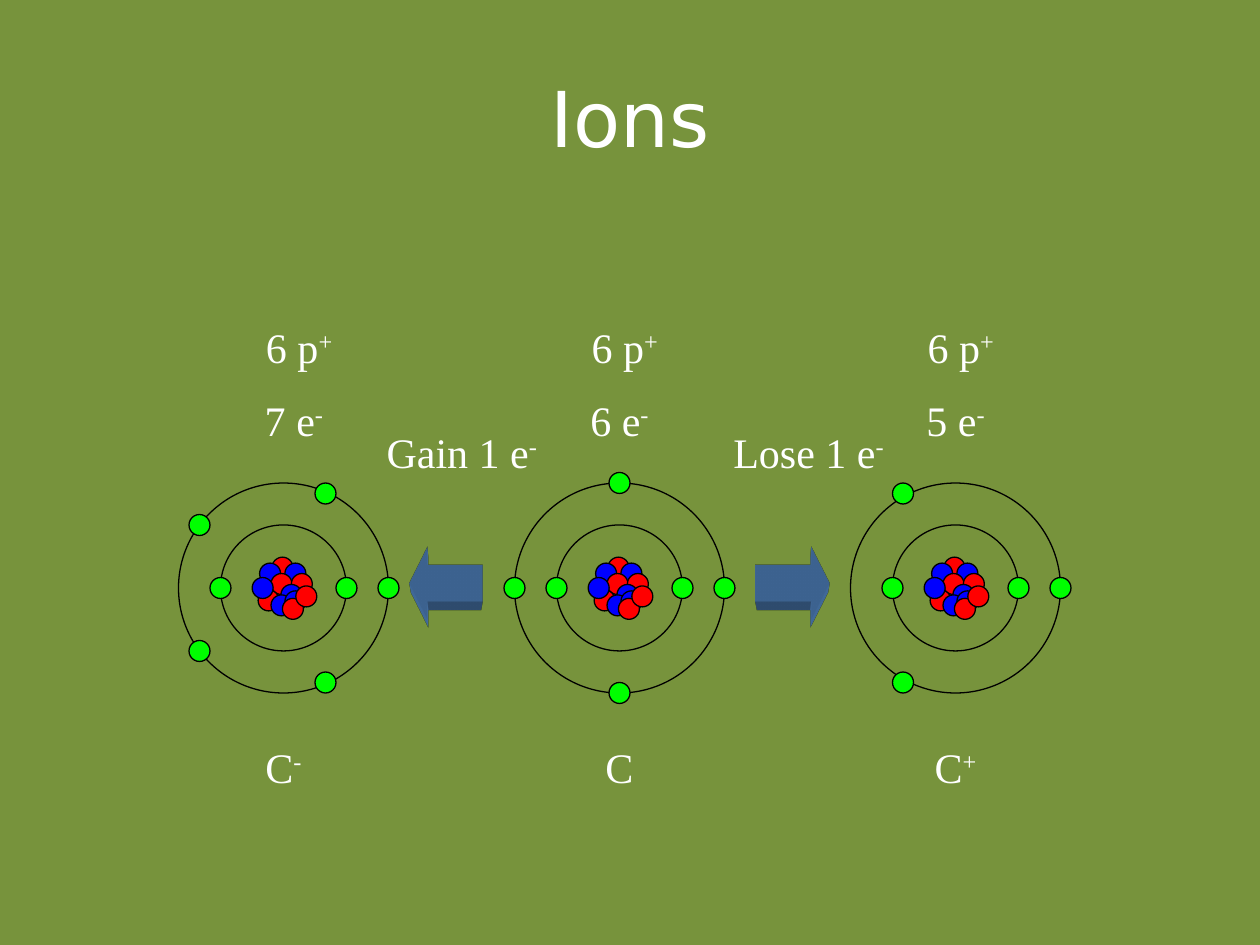
"""Build a slide comparing a neutral carbon atom with its two ions."""
from lxml import etree
from pptx import Presentation
from pptx.dml.color import RGBColor
from pptx.enum.shapes import MSO_SHAPE
from pptx.enum.text import MSO_ANCHOR, MSO_AUTO_SIZE, PP_ALIGN
from pptx.util import Cm, Pt

OVAL = MSO_SHAPE.OVAL
ARROW = MSO_SHAPE.RIGHT_ARROW
CENTER = PP_ALIGN.CENTER
MIDDLE = MSO_ANCHOR.MIDDLE
GROW = MSO_AUTO_SIZE.SHAPE_TO_FIT_TEXT

GREEN, RED, BLUE = "00FF00", "FF0000", "0000FF"
WHITE, BLACK, OLIVE, STEEL = "FFFFFF", "000000", "77933C", "4F81BD"

UNIT = 2.54 / 12
BALL = 2 * UNIT
PITCH = 32 * UNIT
FIRST_X, ATOM_Y = 27 * UNIT, 56 * UNIT
SHELLS = (6, 10)
NUCLEUS = [
    (-0.02, -0.41, RED), (0.24, -0.29, BLUE), (-0.27, -0.29, BLUE),
    (-0.04, -0.08, RED), (0.37, -0.08, RED), (-0.3, 0.25, RED),
    (0.16, 0.14, BLUE), (-0.04, 0.35, BLUE), (0.24, 0.27, BLUE),
    (-0.42, 0, BLUE), (0.19, 0.42, RED), (0.46, 0.17, RED),
]
INNER_ELECTRONS = [(10, 0), (-6, 0), (6, 0)]
ATOMS = [
    {"outer": [(-8, 6), (4, 9), (4, -9), (-8, -6)], "electrons": 7,
     "charge": "-", "width": 2.12, "shift": 0.85, "change": "Gain", "arrow": 8.99},
    {"outer": [(-10, 0), (0, 10), (0, -10)], "electrons": 6,
     "charge": "", "width": 1.27, "shift": 0, "change": "", "arrow": 0},
    {"outer": [(-5, 9), (-5, -9)], "electrons": 5,
     "charge": "+", "width": 2.12, "shift": 0, "change": "Lose", "arrow": 15.98},
]
DEPTH = (
    '<a:{0} xmlns:a="http://schemas.openxmlformats.org/drawingml/2006/main"{1}</a:{0}>'
)
SCENE = DEPTH.format(
    "scene3d",
    '><a:camera prst="legacyPerspectiveBottom"/><a:lightRig rig="legacyFlat3" dir="t"/>',
)
EXTRUSION = DEPTH.format(
    "sp3d",
    ' extrusionH="430200" prstMaterial="legacyMatte"><a:extrusionClr>'
    f'<a:srgbClr val="{STEEL}"/></a:extrusionClr>',
)


def rgb(value):
    return RGBColor.from_string(value)


class SlideBuilder:
    def __init__(self, slide):
        self.slide = slide
        self.shapes = slide.shapes
        self.font = "Times New Roman"
        self.size = 24

    def background(self, color):
        fill = self.slide.background.fill
        fill.solid()
        fill.fore_color.rgb = rgb(color)

    def start_group(self):
        self.shapes = self.slide.shapes.add_group_shape().shapes

    def run(self, p, text, font=None, size=None, raised=False):
        r = p.add_run()
        r.text = text
        r.font.name = font or self.font
        r.font.size = Pt(size or self.size)
        r.font.color.rgb = rgb(WHITE)
        if raised:
            r._r.get_or_add_rPr().set("baseline", "30000")

    def title(self, text):
        sp = self.slide.shapes.title
        sp.left, sp.top, sp.width, sp.height = Cm(1.27), Cm(0.76), Cm(22.86), Cm(3.18)
        tf = sp.text_frame
        tf.vertical_anchor = MIDDLE
        p = tf.paragraphs[0]
        p.alignment = CENTER
        self.run(p, text, "DejaVu Sans", 44)

    def circle(self, x, y, diameter, color=None):
        corner = diameter / 2
        sp = self.shapes.add_shape(
            OVAL, Cm(x - corner), Cm(y - corner), Cm(diameter), Cm(diameter))
        sp.shadow.inherit = False
        if color:
            sp.fill.solid()
            sp.fill.fore_color.rgb = rgb(color)
        else:
            sp.fill.background()
        sp.line.color.rgb = rgb(BLACK)
        sp.line.width = Pt(0.75)

    def arrow(self, x, y, size, to_left):
        sp = self.shapes.add_shape(
            ARROW, Cm(x - size / 2), Cm(y - size / 2), Cm(size), Cm(size))
        sp.adjustments[0], sp.adjustments[1] = 0.5, 0.25
        sp.shadow.inherit = False
        sp.fill.solid()
        sp.fill.fore_color.rgb = rgb(STEEL)
        sp.line.fill.background()
        props = sp._element.spPr
        if to_left:
            props.xfrm.set("flipH", "1")
        for xml in (SCENE, EXTRUSION):
            props.append(etree.fromstring(xml))

    def label(self, x, top, width, height, lines):
        sp = self.shapes.add_textbox(Cm(x - width / 2), Cm(top), Cm(width), Cm(height))
        tf = sp.text_frame
        tf.word_wrap = True
        tf.auto_size = GROW
        for i, (text, charge) in enumerate(lines):
            p = tf.add_paragraph() if i else tf.paragraphs[0]
            p.alignment = CENTER
            p.space_before = Pt(13)
            self.run(p, text)
            if charge:
                self.run(p, charge, raised=True)

    def atom(self, x, y, outer):
        for dx, dy, color in NUCLEUS:
            self.circle(x + dx, y + dy, BALL, color)
        for radius in SHELLS:
            self.circle(x, y, 2 * radius * UNIT)
        for dx, dy in INNER_ELECTRONS + outer:
            self.circle(x + dx * UNIT, y + dy * UNIT, BALL, GREEN)


def main():
    prs = Presentation()
    prs.slide_width, prs.slide_height = Cm(25.4), Cm(19.05)
    s = SlideBuilder(prs.slides.add_slide(prs.slide_layouts[5]))
    s.background(OLIVE)
    s.title("Ions")
    for i, atom in enumerate(ATOMS):
        x = FIRST_X + i * PITCH
        s.start_group()
        s.atom(x, ATOM_Y, atom["outer"])
        if atom["change"]:
            s.arrow(atom["arrow"], 11.75, 7 * UNIT, atom["change"] == "Gain")
            s.label(atom["arrow"] + 0.32, 8.47, 3.81, 1.27,
                    [(f"{atom['change']} 1 e", "-")])
        s.label(x, 14.82, atom["width"], 1.27, [("C", atom["charge"])])
        s.label(x + 0.21 * (1 if i == 0 else 0), 6.35, 2.12, 2.82,
                [(" 6 p", "+"), (f"{atom['electrons']} e", "-")])
    prs.save("out.pptx")


if __name__ == "__main__":
    main()
